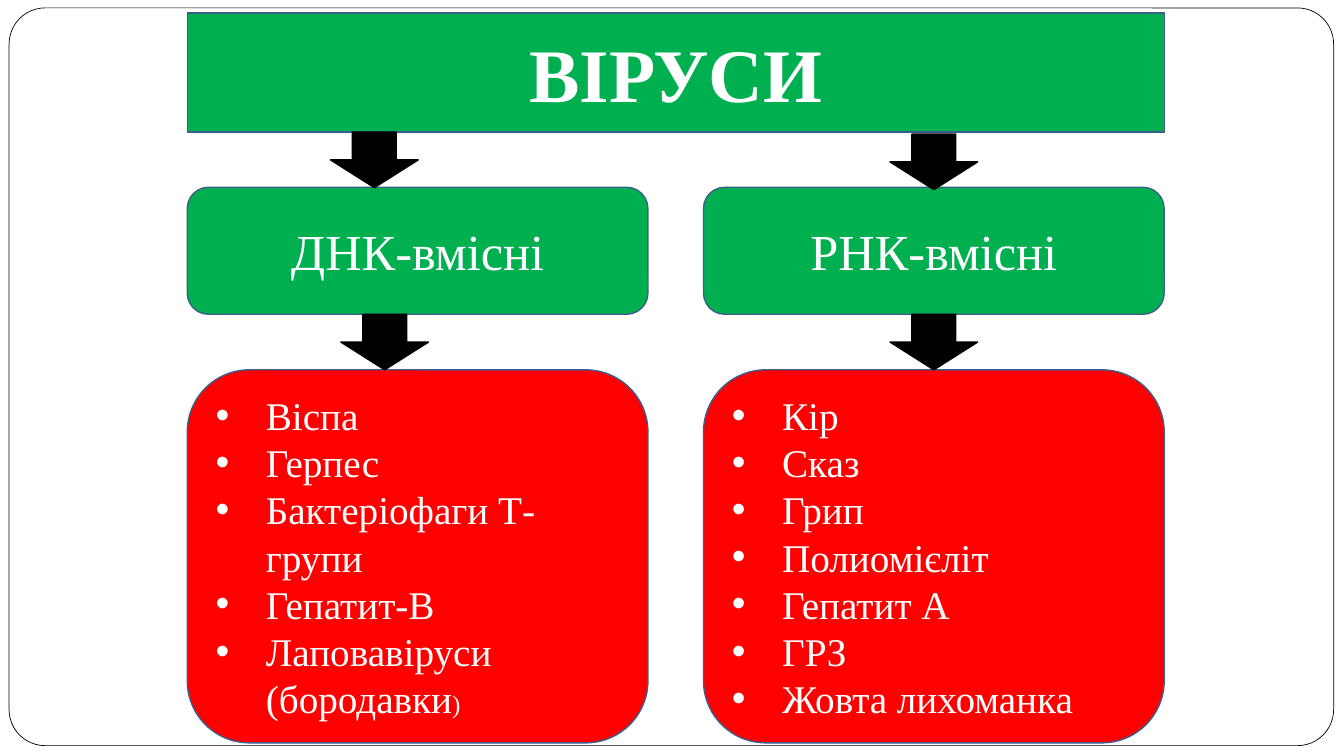
import pptx
import pptx.dml.color
import pptx.enum.shapes
import pptx.enum.text
import pptx.oxml
import pptx.oxml.ns
import pptx.util

Cm = pptx.util.Cm
Pt = pptx.util.Pt
RGBColor = pptx.dml.color.RGBColor
MSO_SHAPE = pptx.enum.shapes.MSO_SHAPE
PP_ALIGN = pptx.enum.text.PP_ALIGN

GREEN = RGBColor(0x00, 0xB0, 0x50)
RED = RGBColor(0xFF, 0x00, 0x00)
BLUE = RGBColor(0x3A, 0x5F, 0x8C)
WHITE = RGBColor(0xFF, 0xFF, 0xFF)
BLACK = RGBColor(0x00, 0x00, 0x00)
FONT = "Times New Roman"

COLUMN_LEFTS = (4.72, 17.73)
COLUMN_WIDTH = 11.61
BANNER_WIDTH = COLUMN_LEFTS[1] - COLUMN_LEFTS[0] + COLUMN_WIDTH
HEADING_TOP, HEADING_HEIGHT = 4.72, 3.2
LIST_TOP, LIST_HEIGHT = 9.32, 9.4
ARROW_WIDTH, ARROW_HEIGHT = 2.21, 1.4
ARROW_SPOTS = ((8.33, 3.33), (22.43, 3.38), (8.59, 7.92), (22.43, 7.92))

VIRUS_GROUPS = (
    ("ДНК-вмісні", (
        (("Віспа", 28),),
        (("Герпес", 28),),
        (("Бактеріофаги Т-групи", 28),),
        (("Гепатит-В", 28),),
        (("Лаповавіруси (бородавки", 28), (")", 18)),
    )),
    ("РНК-вмісні", tuple(((name, 28),) for name in (
        "Кір", "Сказ", "Грип", "Полиомієліт", "Гепатит А", "ГРЗ",
        "Жовта лихоманка",
    ))),
)


def paint(part, fill, line, width):
    part.fill.solid()
    part.fill.fore_color.rgb = fill
    part.line.color.rgb = line
    part.line.width = Pt(width)


def add_plain_shape(slide, kind, left, top, width, height, fill, line_width):
    part = slide.shapes.add_shape(
        kind, Cm(left), Cm(top), Cm(width), Cm(height))
    part.shadow.inherit = False
    paint(part, fill, BLACK, line_width)
    return part


def shape_box(box, left, top, width, height, fill):
    box.left, box.top = Cm(left), Cm(top)
    box.width, box.height = Cm(width), Cm(height)
    box._element.spPr.append(pptx.oxml.parse_xml(
        f'<a:prstGeom {pptx.oxml.ns.nsdecls("a")} prst="roundRect">'
        '<a:avLst/></a:prstGeom>'))
    paint(box, fill, BLUE, 1)
    frame = box.text_frame
    frame.word_wrap = True
    frame.auto_size = pptx.enum.text.MSO_AUTO_SIZE.NONE
    frame.vertical_anchor = pptx.enum.text.MSO_ANCHOR.MIDDLE


def add_run(paragraph, text, size, bold=False):
    run = paragraph.add_run()
    run.text = text
    run.font.name = FONT
    run.font.size = Pt(size)
    run.font.bold = bold
    run.font.color.rgb = WHITE


def write_heading(box, text, size, bold=False):
    paragraph = box.text_frame.paragraphs[0]
    paragraph.alignment = PP_ALIGN.CENTER
    paragraph.space_before = Pt(0)
    add_run(paragraph, text, size, bold)


def add_bullet(paragraph):
    properties = paragraph._p.get_or_add_pPr()
    properties.set("marL", str(Cm(1.27)))
    properties.set("indent", str(-Cm(1.27)))
    for tag, name, value in (("buFont", "typeface", "Arial"),
                             ("buChar", "char", "•")):
        properties.append(pptx.oxml.parse_xml(
            f'<a:{tag} {pptx.oxml.ns.nsdecls("a")} {name}="{value}"/>'))


def write_list(box, items):
    frame = box.text_frame
    for index, runs in enumerate(items):
        paragraph = frame.add_paragraph() if index else frame.paragraphs[0]
        paragraph.alignment = PP_ALIGN.LEFT
        paragraph.space_before = Pt(0)
        add_bullet(paragraph)
        for text, size in runs:
            add_run(paragraph, text, size)


def main():
    deck = pptx.Presentation()
    deck.slide_width, deck.slide_height = Cm(33.87), Cm(19.05)
    slide = deck.slides.add_slide(
        deck.slide_layouts.get_by_name("Comparison"))

    border = add_plain_shape(slide, MSO_SHAPE.ROUNDED_RECTANGLE,
                             0.23, 0.2, 33.38, 18.59, WHITE, 0.5)
    border.adjustments[0] = 0.049
    slide.shapes._spTree.insert(2, border._element)

    banner = slide.shapes.title
    shape_box(banner, COLUMN_LEFTS[0], 0.33, BANNER_WIDTH, 3, GREEN)
    write_heading(banner, "ВІРУСИ", 54, bold=True)

    boxes = {box.placeholder_format.idx: box for box in slide.placeholders}
    for column, (heading, viruses) in enumerate(VIRUS_GROUPS):
        left = COLUMN_LEFTS[column]
        heading_box, list_box = boxes[2 * column + 1], boxes[2 * column + 2]
        shape_box(heading_box, left, HEADING_TOP,
                  COLUMN_WIDTH, HEADING_HEIGHT, GREEN)
        write_heading(heading_box, heading, 36)
        shape_box(list_box, left, LIST_TOP, COLUMN_WIDTH, LIST_HEIGHT, RED)
        write_list(list_box, viruses)

    for left, top in ARROW_SPOTS:
        add_plain_shape(slide, MSO_SHAPE.DOWN_ARROW, left, top,
                        ARROW_WIDTH, ARROW_HEIGHT, BLACK, 1)

    deck.save("out.pptx")


if __name__ == "__main__":
    main()
